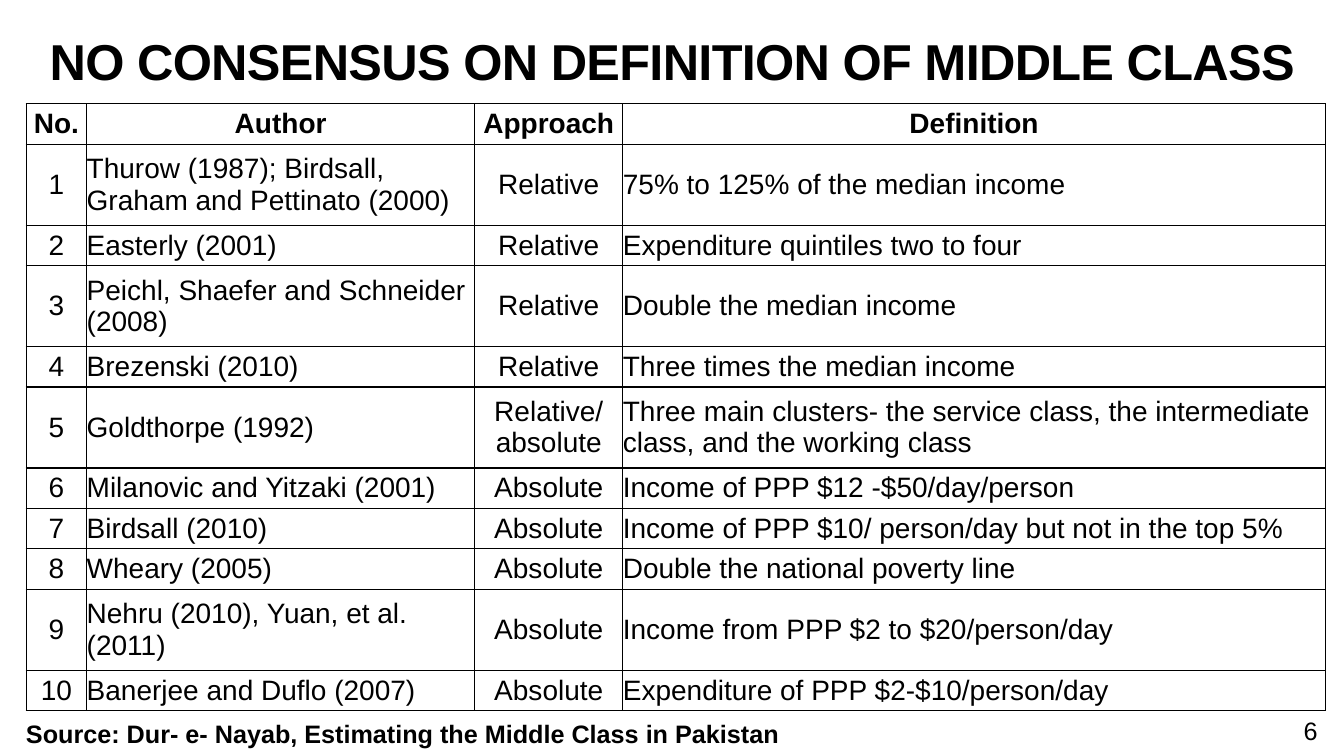
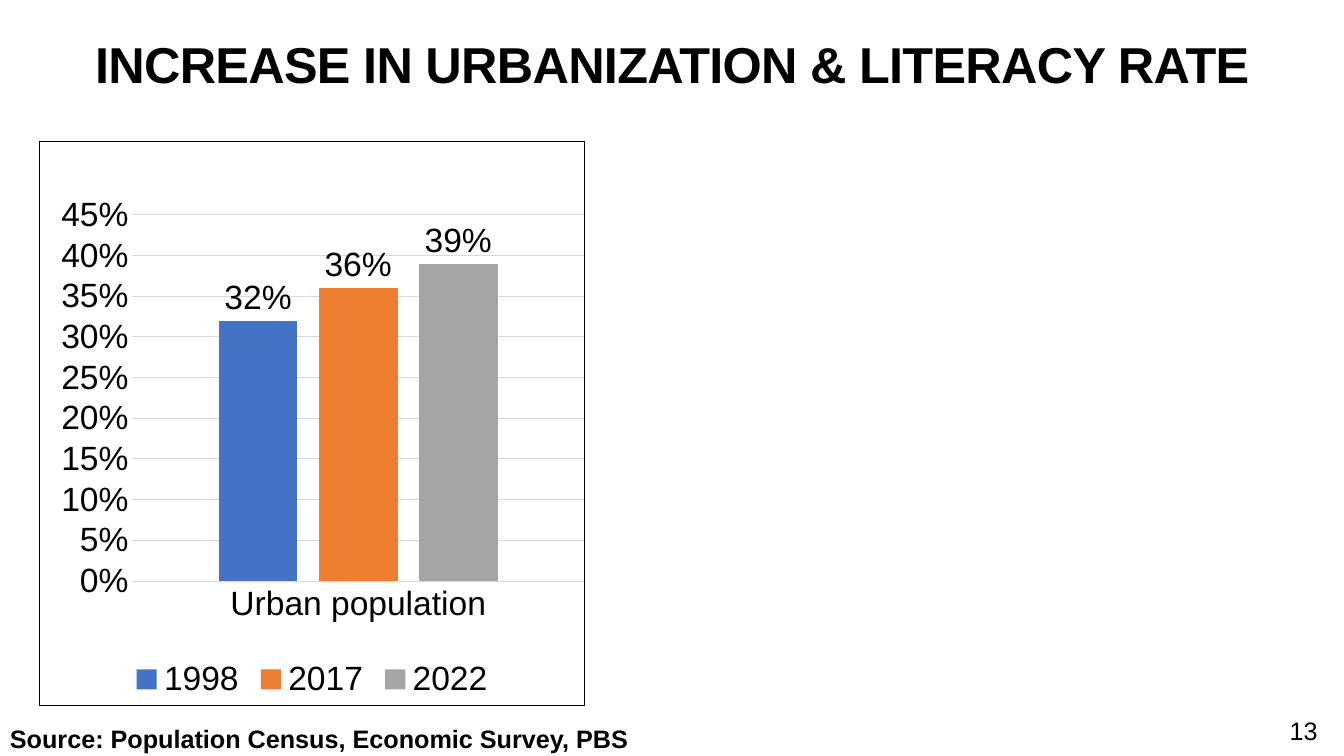
from dataclasses import dataclass
from lxml.etree import SubElement
from pptx import Presentation
from pptx.chart.data import CategoryChartData
from pptx.dml.color import RGBColor
from pptx.enum.chart import XL_CHART_TYPE, XL_LABEL_POSITION, XL_LEGEND_POSITION, XL_TICK_MARK
from pptx.enum.text import MSO_ANCHOR, MSO_AUTO_SIZE, PP_ALIGN
from pptx.oxml import parse_xml
from pptx.oxml.ns import nsdecls, qn
from pptx.util import Pt


@dataclass(frozen=True)
class Theme:
    font: str = "Arial"
    ink: str = "000000"
    grid: str = "D9D9D9"
    bars: tuple = ("4472C4", "ED7D31", "A5A5A5")
    title_size: int = 36
    table_size: int = 20
    chart_size: int = 24
    note_size: int = 18
    table_line: float = 1
    chart_line: float = 0.75


THEME = Theme()
SLIDE_SIZE = (960, 540)
TITLE_ONLY = 5

DEFINITIONS = {
    "title": "NO CONSENSUS ON DEFINITION OF MIDDLE CLASS",
    "title_box": (0, 3.6, 960, 86.4),
    "number": "6",
    "source": "Source: Dur- e- Nayab, Estimating the Middle Class in Pakistan",
    "source_box": (11.5, 509.8, 620, 29),
}
TABLE_ORIGIN = (18.7, 74.2)
COLUMN_WIDTHS = (43.2, 277.2, 105.8, 501.9)
LINE_HEIGHT = 28.9
TWO_LINE_ROWS = (1, 3, 5, 9)
CENTRED_COLUMNS = (0, 2)
HEADER = ("No.", "Author", "Approach", "Definition")
STUDIES = [
    ("Thurow (1987); Birdsall, Graham and Pettinato (2000)", "Relative", "75% to 125% of the median income"),
    ("Easterly (2001)", "Relative", "Expenditure quintiles two to four"),
    ("Peichl, Shaefer and Schneider (2008)", "Relative", "Double the median income"),
    ("Brezenski (2010)", "Relative", "Three times the median income"),
    ("Goldthorpe (1992)", "Relative/ absolute",
     "Three main clusters- the service class, the intermediate class, and the working class"),
    ("Milanovic and Yitzaki (2001)", "Absolute", "Income of PPP $12 -$50/day/person"),
    ("Birdsall (2010)", "Absolute", "Income of PPP $10/ person/day but not in the top 5%"),
    ("Wheary (2005)", "Absolute", "Double the national poverty line"),
    ("Nehru (2010), Yuan, et al.(2011)", "Absolute", "Income from PPP $2 to $20/person/day"),
    ("Banerjee and Duflo (2007)", "Absolute", "Expenditure of PPP $2‑$10/person/day"),
]

URBANIZATION = {
    "title": "INCREASE IN URBANIZATION & LITERACY RATE",
    "title_box": (0, -0.7, 960, 98.6),
    "number": "13",
    "source": "Source: Population Census, Economic Survey, PBS",
    "source_box": (0, 513.4, 508, 29),
}
NUMBER_BOX = (845.3, 507.6, 103, 28.8)
CHART_BOX = (28.1, 100.8, 389.5, 403.2)
PLOT_AREA = {"x": 0.17, "y": 0.13, "w": 0.83, "h": 0.65}
CATEGORY = "Urban population"
URBAN_SHARE = [("1998", 0.32), ("2017", 0.36), ("2022", 0.39)]


def points(values):
    return [Pt(value) for value in values]


def set_font(font, size, bold=False):
    font.name = THEME.font
    font.size = Pt(size)
    font.bold = bold
    font.color.rgb = RGBColor.from_string(THEME.ink)


def write_text(frame, text, size, bold=False, align=PP_ALIGN.LEFT, line_spacing=None, tracking=0):
    para = frame.paragraphs[0]
    para.alignment = align
    if line_spacing:
        para.line_spacing = line_spacing
    span = para.add_run()
    span.text = text
    set_font(span.font, size, bold)
    if tracking:
        span.font._element.set("spc", str(round(tracking * 100)))


def add_note(page, box, text, anchor=MSO_ANCHOR.TOP, **text_format):
    frame = page.shapes.add_textbox(*points(box)).text_frame
    frame.word_wrap = True
    frame.vertical_anchor = anchor
    write_text(frame, text, THEME.note_size, **text_format)


def add_page(deck, content):
    page = deck.slides.add_slide(deck.slide_layouts[TITLE_ONLY])
    title = page.shapes.title
    title.left, title.top, title.width, title.height = points(content["title_box"])
    frame = title.text_frame
    frame.auto_size = MSO_AUTO_SIZE.NONE
    frame.vertical_anchor = MSO_ANCHOR.MIDDLE
    write_text(frame, content["title"], THEME.title_size, bold=True,
               align=PP_ALIGN.CENTER, line_spacing=0.85, tracking=-0.5)
    add_note(page, NUMBER_BOX, content["number"], anchor=MSO_ANCHOR.MIDDLE, align=PP_ALIGN.RIGHT)
    add_note(page, content["source_box"], content["source"], bold=True)
    return page


def format_cell(cell):
    cell.margin_left = cell.margin_right = cell.margin_top = cell.margin_bottom = 0
    cell.vertical_anchor = MSO_ANCHOR.MIDDLE
    properties = cell._tc.get_or_add_tcPr()
    for side in ("lnL", "lnR", "lnT", "lnB"):
        line = SubElement(properties, qn(f"a:{side}"), w=str(Pt(THEME.table_line)))
        fill = SubElement(line, qn("a:solidFill"))
        SubElement(fill, qn("a:srgbClr"), val=THEME.ink)
    cell.fill.background()


def add_definition_table(page):
    rows = [HEADER] + [(str(number), *study) for number, study in enumerate(STUDIES, 1)]
    heights = [LINE_HEIGHT * (2 if index in TWO_LINE_ROWS else 1) for index in range(len(rows))]
    box = (*TABLE_ORIGIN, sum(COLUMN_WIDTHS), sum(heights))
    table = page.shapes.add_table(len(rows), len(HEADER), *points(box)).table
    table.horz_banding = False
    for column, width in zip(table.columns, COLUMN_WIDTHS):
        column.width = Pt(width)
    for row, height in zip(table.rows, heights):
        row.height = Pt(height)
    for row_index, row in enumerate(rows):
        for column_index, text in enumerate(row):
            cell = table.cell(row_index, column_index)
            format_cell(cell)
            is_header = row_index == 0
            centred = is_header or column_index in CENTRED_COLUMNS
            write_text(cell.text_frame, text, THEME.table_size, bold=is_header,
                       align=PP_ALIGN.CENTER if centred else PP_ALIGN.LEFT)


def style_line(line, color):
    line.color.rgb = RGBColor.from_string(color)
    line.width = Pt(THEME.chart_line)


def frame_chart(chart):
    border = parse_xml(
        f'<c:spPr {nsdecls("c", "a")}><a:noFill/><a:ln w="{Pt(THEME.chart_line)}">'
        f'<a:solidFill><a:srgbClr val="{THEME.ink}"/></a:solidFill></a:ln></c:spPr>')
    chart._chartSpace.find(qn("c:chart")).addnext(border)


def place_plot(chart):
    plot_area = chart._chartSpace.find(qn("c:chart")).find(qn("c:plotArea"))
    for old_layout in plot_area.findall(qn("c:layout")):
        plot_area.remove(old_layout)
    settings = {"layoutTarget": "inner", "xMode": "edge", "yMode": "edge", **PLOT_AREA}
    tags = "".join(f'<c:{name} val="{value}"/>' for name, value in settings.items())
    layout = parse_xml(f'<c:layout {nsdecls("c")}><c:manualLayout>{tags}</c:manualLayout></c:layout>')
    plot_area.insert(0, layout)


def style_axes(chart):
    for axis in (chart.category_axis, chart.value_axis):
        axis.major_tick_mark = axis.minor_tick_mark = XL_TICK_MARK.NONE
        set_font(axis.tick_labels.font, THEME.chart_size)
    style_line(chart.category_axis.format.line, THEME.grid)
    values = chart.value_axis
    values.minimum_scale, values.maximum_scale, values.major_unit = 0, 0.45, 0.05
    values.tick_labels.number_format = "0%"
    values.tick_labels.number_format_is_linked = False
    values.format.line.fill.background()
    style_line(values.major_gridlines.format.line, THEME.grid)


def add_urban_chart(page):
    data = CategoryChartData(number_format="0%")
    data.categories = [CATEGORY]
    for year, share in URBAN_SHARE:
        data.add_series(year, [share])
    chart = page.shapes.add_chart(XL_CHART_TYPE.COLUMN_CLUSTERED, *points(CHART_BOX), data).chart
    chart.has_title = False
    set_font(chart.font, THEME.chart_size)
    chart.has_legend = True
    chart.legend.position = XL_LEGEND_POSITION.BOTTOM
    chart.legend.include_in_layout = False
    set_font(chart.legend.font, THEME.chart_size)
    style_axes(chart)
    plot = chart.plots[0]
    plot.gap_width, plot.overlap, plot.vary_by_categories = 219, -27, False
    for series, color in zip(plot.series, THEME.bars):
        series.format.fill.solid()
        series.format.fill.fore_color.rgb = RGBColor.from_string(color)
        labels = series.data_labels
        labels.show_value = True
        labels.number_format = "0%"
        labels.number_format_is_linked = False
        labels.position = XL_LABEL_POSITION.OUTSIDE_END
        set_font(labels.font, THEME.chart_size)
    frame_chart(chart)
    place_plot(chart)


def main():
    deck = Presentation()
    deck.slide_width, deck.slide_height = points(SLIDE_SIZE)
    add_definition_table(add_page(deck, DEFINITIONS))
    add_urban_chart(add_page(deck, URBANIZATION))
    deck.save("out.pptx")


if __name__ == "__main__":
    main()
